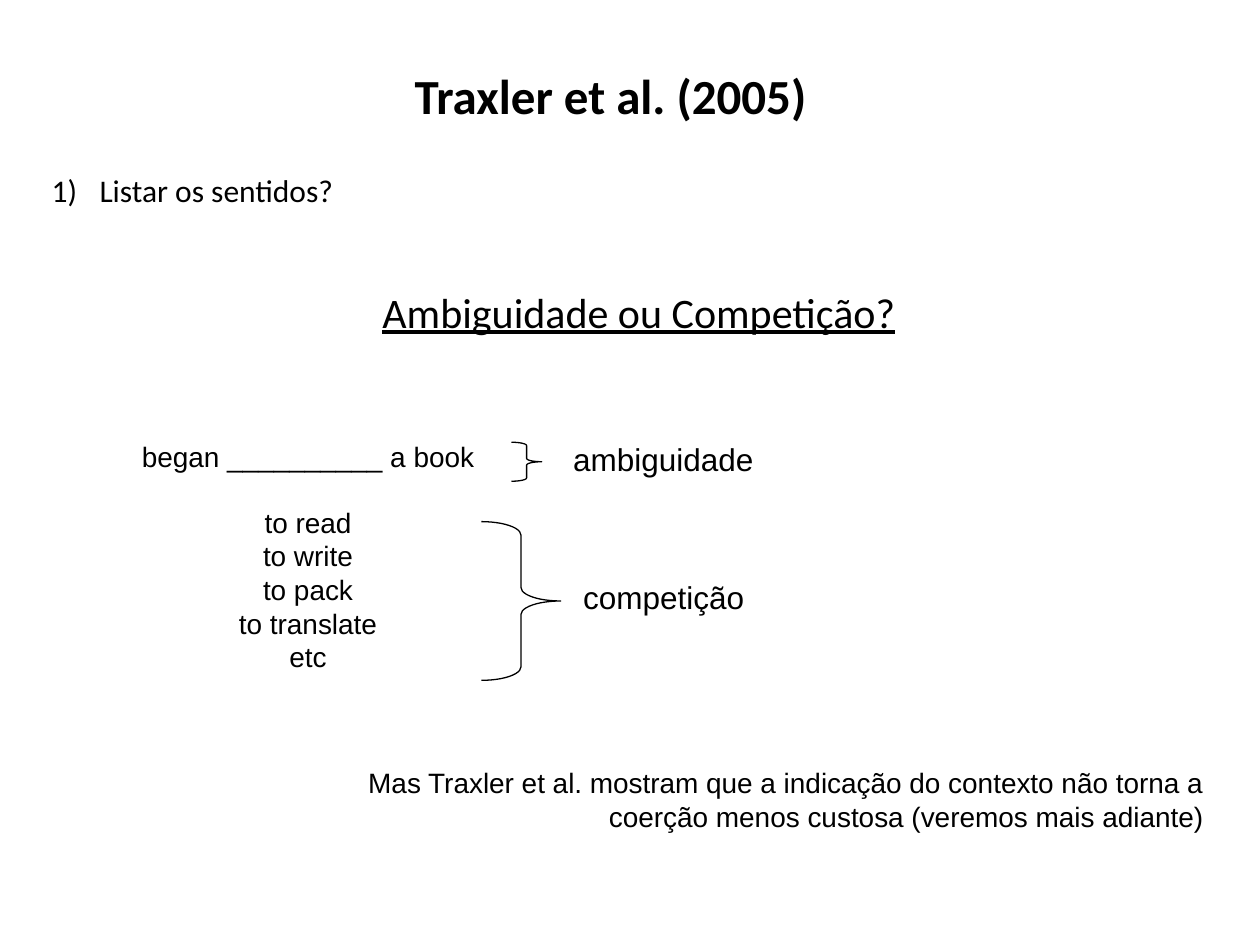
from typing import NamedTuple

from lxml.etree import SubElement
from pptx import Presentation
from pptx.dml.color import RGBColor
from pptx.enum.shapes import MSO_SHAPE
from pptx.enum.text import MSO_ANCHOR, MSO_AUTO_SIZE, PP_ALIGN
from pptx.oxml.ns import qn
from pptx.util import Inches, Pt

BLACK = RGBColor(0, 0, 0)
GRID = Inches(0.1)  # the slide is 100 columns by 75 rows


class Box(NamedTuple):
    """A rectangle in grid columns and rows."""
    left: float
    top: float
    width: float
    height: float

    def inner(self, left, top, width, height):
        return Box(self.left + left, self.top + top, width, height)

    def lengths(self):
        return [round(value * GRID) for value in self]


def place(shape, box):
    shape.left, shape.top, shape.width, shape.height = box.lengths()


def prepare_frame(shape):
    frame = shape.text_frame
    frame.word_wrap = True
    frame.auto_size = MSO_AUTO_SIZE.NONE
    frame.vertical_anchor = MSO_ANCHOR.TOP
    return frame


def write(paragraph, text, size, font="Arial", align=PP_ALIGN.LEFT,
          bold=False, underline=False, space_before=0):
    paragraph.alignment = align
    paragraph.space_before = Pt(space_before)
    run = paragraph.add_run()
    run.text = text
    run.font.name = font
    run.font.size = Pt(size)
    run.font.bold = bold
    run.font.underline = underline
    run.font.color.rgb = BLACK


def set_bullet(paragraph, hanging=0.0, numbered=False):
    """Indent by 0.38 inch, with a "1)" number or no bullet."""
    properties = paragraph._p.get_or_add_pPr()
    properties.set("marL", str(Inches(0.38)))
    properties.set("indent", str(-Inches(hanging)))
    if numbered:
        SubElement(properties, qn("a:buFont"), typeface="+mj-lt")
        SubElement(properties, qn("a:buAutoNum"), type="arabicParenR")
    else:
        SubElement(properties, qn("a:buNone"))


def add_text(slide, box, text, size, **text_format):
    shape = slide.shapes.add_textbox(*box.lengths())
    write(prepare_frame(shape).paragraphs[0], text, size, **text_format)
    return shape.text_frame


def add_brace(slide, box, curve):
    brace = slide.shapes.add_shape(MSO_SHAPE.RIGHT_BRACE, *box.lengths())
    brace.adjustments[0] = curve
    brace.shadow.inherit = False
    brace.fill.background()
    brace.line.color.rgb = BLACK
    brace.line.width = Pt(0.75)


def add_title(slide, box):
    title = slide.shapes.title
    place(title, box)
    write(prepare_frame(title).paragraphs[0], "Traxler et al. (2005)", 28,
          font="Calibri", align=PP_ALIGN.CENTER, bold=True)


def add_questions(slide, box):
    body = slide.placeholders[1]
    place(body, box)
    frame = prepare_frame(body)
    listing = frame.paragraphs[0]
    write(listing, "Listar os sentidos?", 18, font="Calibri")
    set_bullet(listing, hanging=0.38, numbered=True)
    contrast = frame.add_paragraph()
    write(contrast, "Ambiguidade ou Competição?", 24, font="Calibri",
          align=PP_ALIGN.CENTER, underline=True, space_before=44)
    set_bullet(contrast)


def add_examples(slide, box):
    """Place the sentence and its readings, each with a brace and a label."""
    frame = add_text(slide, box.inner(0, 0, 32.3, box.height),
                     "began __________ a book", 16, align=PP_ALIGN.CENTER)
    readings = ["to read", "to write", "to pack", "to translate", "etc"]
    for index, reading in enumerate(readings):
        write(frame.add_paragraph(), reading, 16, align=PP_ALIGN.CENTER,
              space_before=18.4 if index == 0 else 0)

    add_brace(slide, box.inner(32.3, 0.7, 2.4, 3.1), curve=0.11)
    add_text(slide, box.inner(36.2, 0, 21.3, 4), "ambiguidade", 18)
    add_brace(slide, box.inner(29.9, 7, 6.3, 12.6), curve=0.17)
    add_text(slide, box.inner(37, 11, 21.3, 4), "competição", 18)


def add_conclusion(slide, box):
    add_text(slide, box,
             "Mas Traxler et al. mostram que a indicação do contexto não torna a "
             "coerção menos custosa (veremos mais adiante)",
             16, align=PP_ALIGN.RIGHT)


def main():
    presentation = Presentation()
    presentation.slide_width = 100 * GRID
    presentation.slide_height = 75 * GRID
    slide = presentation.slides.add_slide(presentation.slide_layouts[1])
    add_title(slide, Box(30.5, 4.7, 35.9, 5.7))
    add_questions(slide, Box(3.1, 13.1, 91.4, 14))
    add_examples(slide, Box(8.3, 34.4, 58.3, 23.7))
    add_conclusion(slide, Box(20.1, 60.3, 76.4, 6.4))
    presentation.save("out.pptx")


if __name__ == "__main__":
    main()
